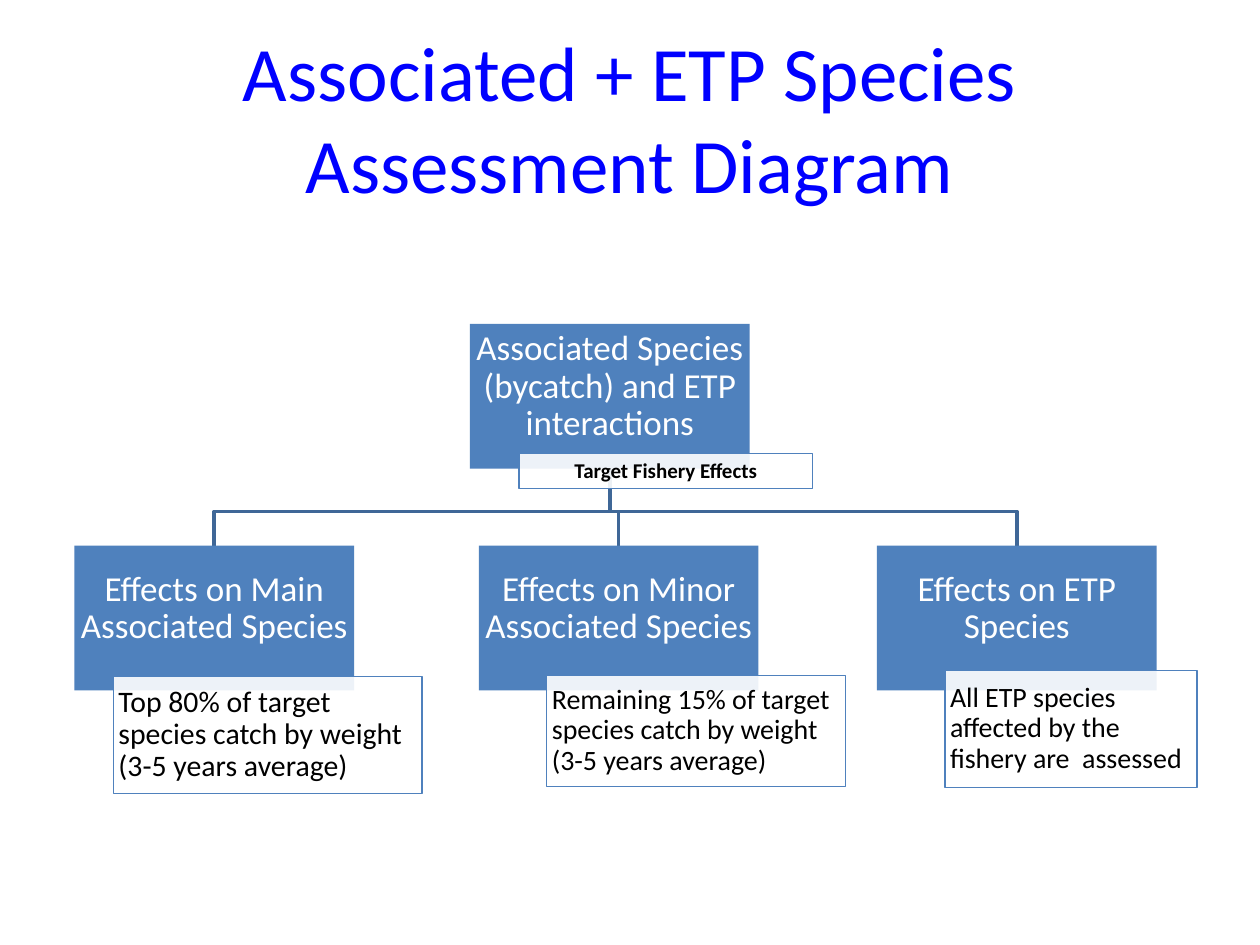
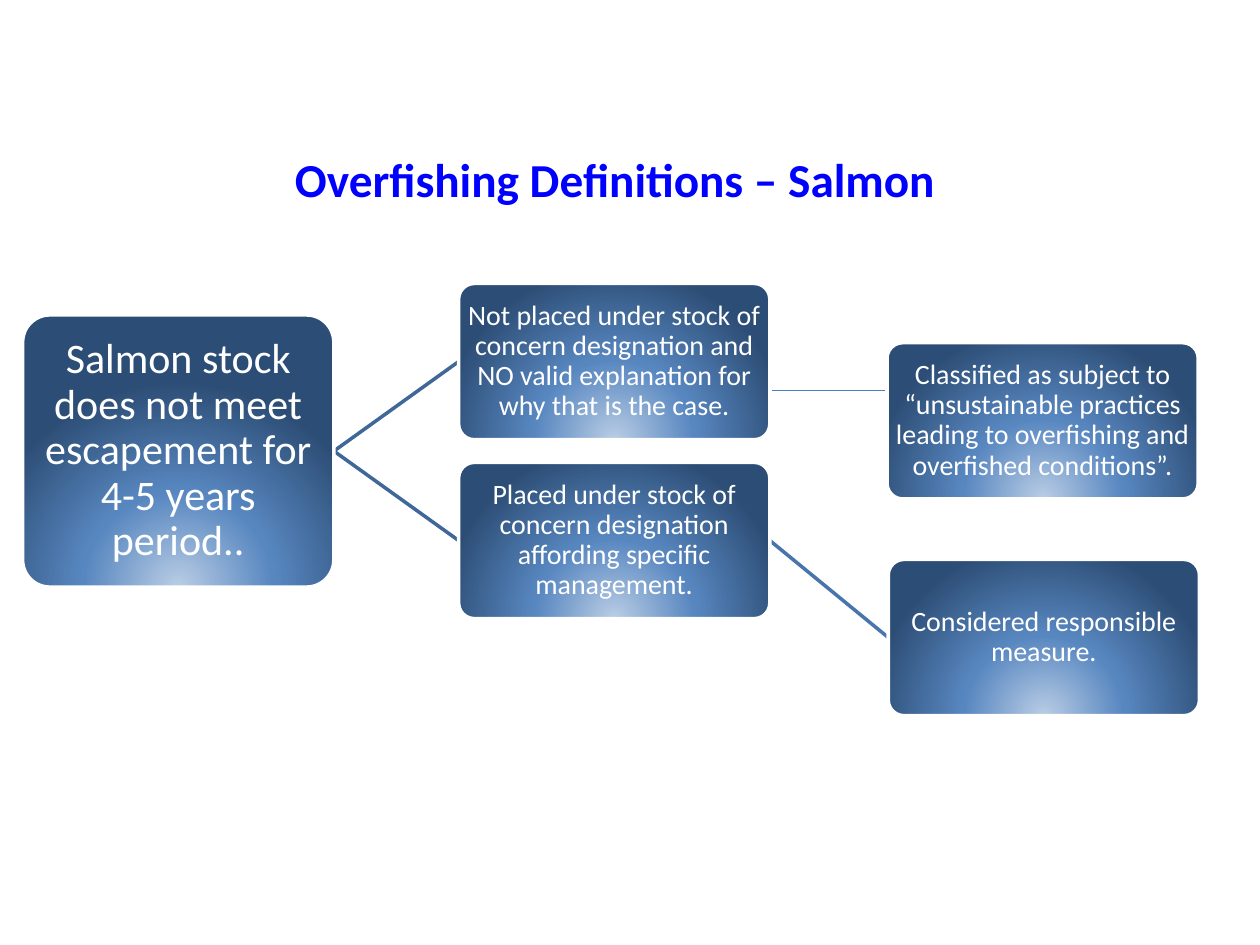
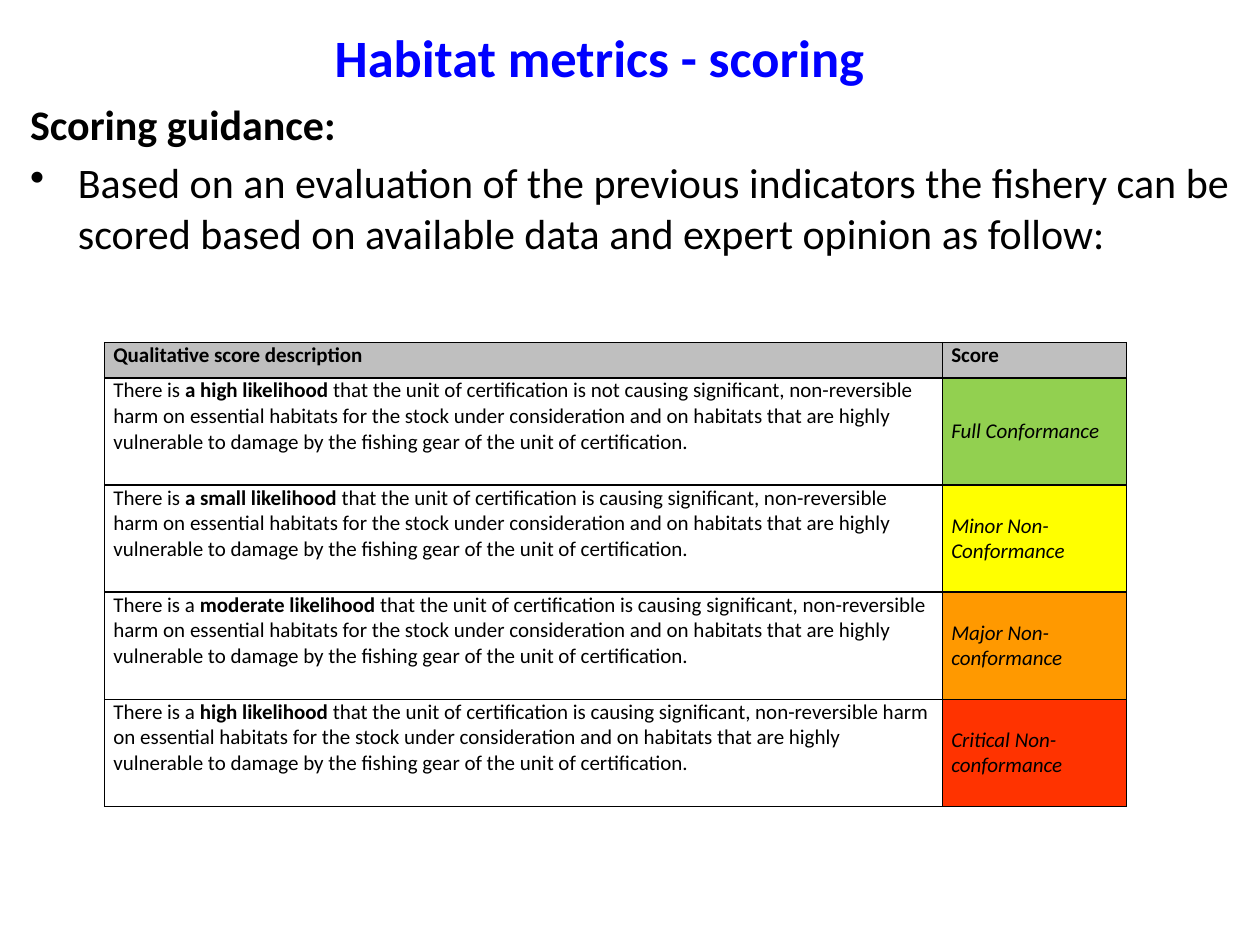
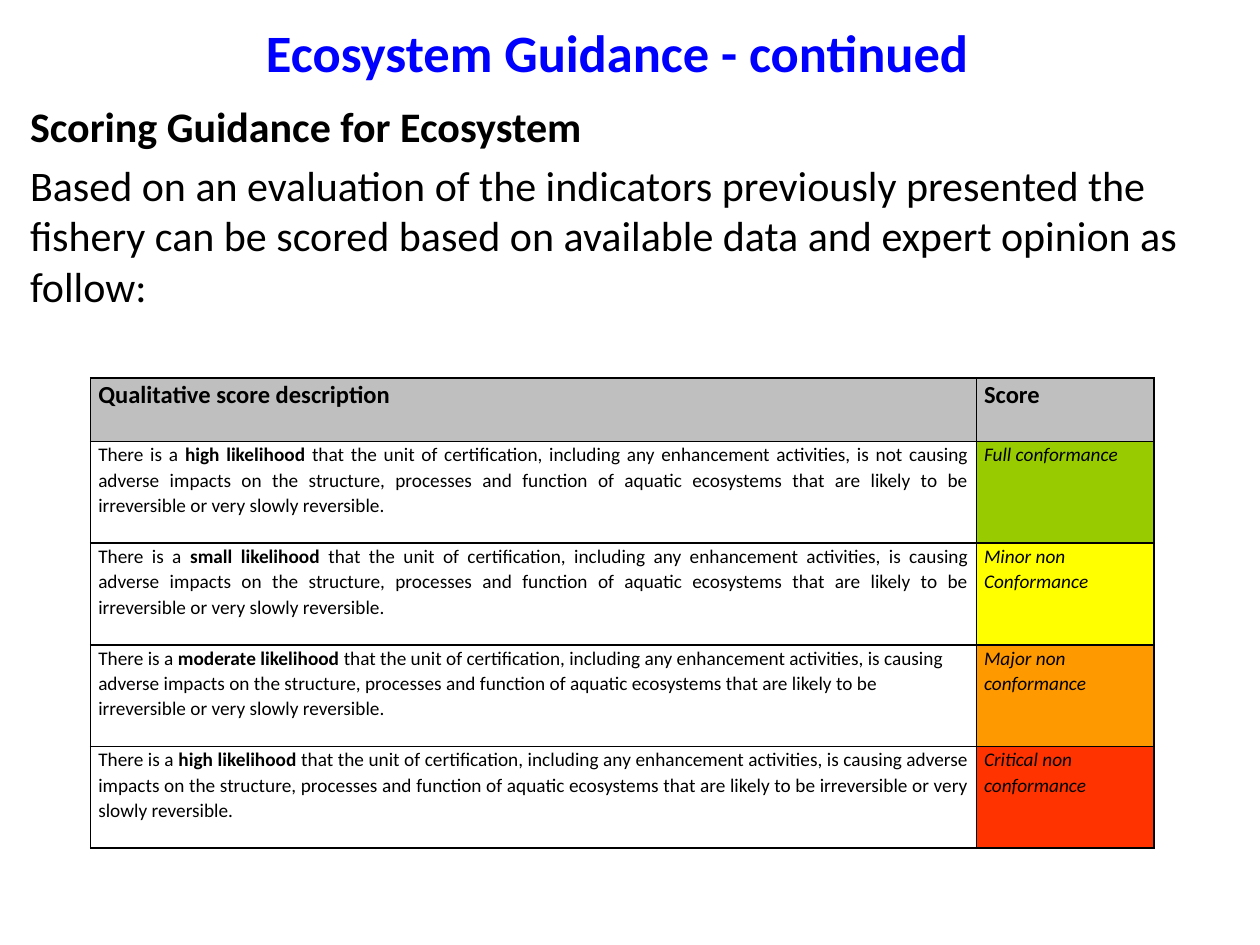
import dataclasses

import lxml.etree
import pptx
import pptx.dml.color
import pptx.enum.shapes
import pptx.enum.text
import pptx.oxml
import pptx.oxml.ns
import pptx.util


@dataclasses.dataclass(frozen=True)
class Theme:
    font: str = "Calibri"
    title: str = "0000FF"
    ink: str = "000000"
    paper: str = "FFFFFF"
    box: str = "4F81BD"
    branch: str = "3F6797"
    branch_light: str = "4875AC"
    branch_thin: str = "4B7EBC"
    header: str = "BFBFBF"
    minor: str = "FFFF00"
    major: str = "FF9900"
    critical: str = "FF3300"
    glow: tuple = ((0, "B9CDE5"), (46, "5887C0"), (100, "2C4D75"))
    diagram_title_size: float = 44
    salmon_title_size: float = 27
    title_size: float = 30
    body_size: float = 24
    box_size: float = 20
    small_size: float = 16


theme = Theme()
RGB = pptx.dml.color.RGBColor.from_string
ALIGN = pptx.enum.text.PP_ALIGN
ANCHOR = pptx.enum.text.MSO_ANCHOR
SHAPE = pptx.enum.shapes.MSO_SHAPE

deck = pptx.Presentation()
deck.slide_width = pptx.util.Inches(10)
deck.slide_height = pptx.util.Inches(7.5)
column = deck.slide_width / 100
row = deck.slide_height / 75


def on_grid(*lengths):
    return [round(length * (row if i % 2 else column)) for i, length in enumerate(lengths)]


def write(frame, text, size=16, color=theme.ink, bold=False, italic=False, align=ALIGN.LEFT,
          anchor=ANCHOR.TOP, insets=(0.1, 0.05, 0.1, 0.05), spacing=None, before=None,
          after=None, bullet=None, hang=0, new=False):
    frame.word_wrap = True
    frame.vertical_anchor = anchor
    frame.margin_left, frame.margin_top, frame.margin_right, frame.margin_bottom = [
        pptx.util.Inches(inset) for inset in insets]
    paragraph = frame.add_paragraph() if new else frame.paragraphs[0]
    paragraph.alignment = align
    paragraph.line_spacing = spacing
    paragraph.space_before = None if before is None else pptx.util.Pt(before)
    paragraph.space_after = None if after is None else pptx.util.Pt(after)
    if bullet:
        properties = paragraph._p.get_or_add_pPr()
        properties.set("marL", str(pptx.util.Inches(hang)))
        properties.set("indent", str(-pptx.util.Inches(hang)))
        lxml.etree.SubElement(properties, pptx.oxml.ns.qn("a:buChar"), char=bullet)
    for i, part in enumerate(text.split("*")):
        if part:
            run = paragraph.add_run()
            run.text = part
            run.font.name = theme.font
            run.font.size = pptx.util.Pt(size)
            run.font.bold = bold or i % 2 == 1
            run.font.italic = italic
            run.font.color.rgb = RGB(color)


slides = []
for title, place, size, bold in (
    ("Associated + ETP Species Assessment Diagram", (5, 3, 90, 12.5), theme.diagram_title_size, False),
    ("Overfishing Definitions – Salmon", (19.9, 10.7, 57.8, 6.9), theme.salmon_title_size, True),
    ("Habitat metrics - scoring", (1.6, 1, 92, 6.9), theme.title_size, True),
    ("Ecosystem Guidance - continued", (3, 0.6, 92, 6.9), theme.title_size, True),
):
    slide = deck.slides.add_slide(deck.slide_layouts[6])
    write(slide.shapes.add_textbox(*on_grid(*place)).text_frame, title, size=size,
          color=theme.title, bold=bold, align=ALIGN.CENTER, anchor=ANCHOR.MIDDLE)
    slides.append(slide)
diagram, salmon, habitat, ecosystem = slides

trunk, trunk_top, fork, branch_end = 48.4, 37.2, 40.6, 43.3
for branch in (80.7, 49.1, 17):
    outline = diagram.shapes.build_freeform(*on_grid(trunk, trunk_top))
    outline.add_line_segments(
        [on_grid(*point) for point in ((trunk, fork), (branch, fork), (branch, branch_end))],
        close=False)
    elbow = outline.convert_to_shape()
    elbow.shadow.inherit = False
    elbow.fill.background()
    elbow.line.color.rgb = RGB(theme.branch)
    elbow.line.width = pptx.util.Pt(2)

for effect, corner, caption, caption_place, caption_format in (
    ("Associated Species (bycatch) and ETP interactions", (37.3, 25.7),
     "Target Fishery Effects", (41.2, 36, 23.3, 2.8),
     dict(size=12, bold=True, align=ALIGN.CENTER)),
    ("Effects on Main Associated Species", (5.9, 43.3),
     "Top 80% of target species catch by weight (3-5 years average)", (9, 53.7, 24.5, 9.3),
     dict(size=17)),
    ("Effects on Minor Associated Species", (38, 43.3),
     "Remaining 15% of target species catch by weight (3-5 years average)",
     (43.4, 53.6, 23.7, 8.8), dict(size=theme.small_size)),
    ("Effects on ETP Species", (69.6, 43.3),
     "All ETP species affected by the fishery are  assessed", (75, 53.2, 20, 9.3),
     dict(size=theme.small_size)),
):
    box = diagram.shapes.add_shape(SHAPE.RECTANGLE, *on_grid(*corner, 22.2, 11.5))
    box.shadow.inherit = False
    box.fill.solid()
    box.fill.fore_color.rgb = RGB(theme.box)
    box.line.fill.background()
    write(box.text_frame, effect, size=theme.box_size, color=theme.paper, align=ALIGN.CENTER,
          anchor=ANCHOR.MIDDLE, insets=(0.01, 0.01, 0.01, 0.16), spacing=0.9)

    note = diagram.shapes.add_shape(SHAPE.RECTANGLE, *on_grid(*caption_place))
    note.shadow.inherit = False
    note.fill.solid()
    note.fill.fore_color.rgb = RGB(theme.paper)
    tint = note._element.spPr.find(pptx.oxml.ns.qn("a:solidFill"))[0]
    lxml.etree.SubElement(tint, pptx.oxml.ns.qn("a:alpha"), val="90000")
    note.line.color.rgb = RGB(theme.box)
    note.line.width = pptx.util.Pt(0.75)
    write(note.text_frame, caption, anchor=ANCHOR.MIDDLE, insets=(0.04, 0.01, 0.04, 0.01),
          spacing=0.9, **caption_format)

for start, end, color, width in (
    ((26.5, 35.8), (36.4, 28.7), theme.branch, 2),
    ((26.5, 35.8), (36.4, 42.9), theme.branch, 2),
    ((61.1, 42.9), (70.5, 50.6), theme.branch_light, 2),
    ((61.3, 31), (70.5, 31), theme.branch_thin, 0.75),
):
    link = salmon.shapes.add_connector(
        pptx.enum.shapes.MSO_CONNECTOR.STRAIGHT, *on_grid(*start, *end))
    link.line.color.rgb = RGB(color)
    link.line.width = pptx.util.Pt(width)
    lxml.etree.SubElement(link._element.spPr, pptx.oxml.ns.qn("a:effectLst"))

stops = "".join(
    f'<a:gs pos="{position * 1000}"><a:srgbClr val="{color}"/></a:gs>'
    for position, color in theme.glow)
glow_xml = (
    f'<a:gradFill {pptx.oxml.ns.nsdecls("a")} rotWithShape="1"><a:gsLst>{stops}</a:gsLst>'
    '<a:path path="circle"><a:fillToRect l="50000" t="130000" r="50000" b="-30000"/></a:path>'
    '</a:gradFill>')
for step, corner, height, size, inset in (
    ("Salmon stock does not meet escapement for 4-5 years period..",
     (1.8, 25), 21.6, theme.body_size, 0.02),
    ("Not placed under stock of concern designation and NO valid explanation for why that is "
     "the case.", (36.4, 22.5), 12.4, theme.small_size, 0.01),
    ("Placed under stock of concern designation affording specific management.",
     (36.4, 36.7), 12.4, theme.small_size, 0.01),
    ("Considered responsible measure.", (70.5, 44.4), 12.4, theme.small_size, 0.01),
    ("Classified as subject to “unsustainable practices leading to overfishing and overfished "
     "conditions”.", (70.4, 27.2), 12.4, theme.small_size, 0.01),
):
    stage = salmon.shapes.add_shape(
        SHAPE.ROUNDED_RECTANGLE, *on_grid(*corner, 24.7, height))
    stage.adjustments[0] = 0.1
    stage.shadow.inherit = False
    stage.fill.background()
    properties = stage._element.spPr
    properties.replace(properties.find(pptx.oxml.ns.qn("a:noFill")), pptx.oxml.parse_xml(glow_xml))
    stage.line.color.rgb = RGB(theme.paper)
    stage.line.width = pptx.util.Pt(2)
    write(stage.text_frame, step, size=size, color=theme.paper, align=ALIGN.CENTER,
          anchor=ANCHOR.MIDDLE, insets=(inset,) * 4, spacing=0.9)

for slide, top, heading, guidance, guidance_format in (
    (habitat, 7.3, "Scoring guidance:",
     "Based on an evaluation of the previous indicators the fishery can be scored based on "
     "available data and expert opinion as follow:", dict(bullet="•", hang=0.38)),
    (ecosystem, 7.5, "Scoring Guidance for Ecosystem",
     "Based on an evaluation of the indicators previously presented the fishery can be scored "
     "based on available data and expert opinion as follow:", {}),
):
    body = slide.shapes.add_textbox(*on_grid(1.4, top, 98.4, 43.2)).text_frame
    write(body, heading, size=theme.body_size, bold=True, before=4.8)
    write(body, guidance, size=theme.body_size, before=4.8, new=True, **guidance_format)

habitat_harm = (
    "There is {} that the unit of certification is {}causing significant, non-reversible harm on "
    "essential habitats for the stock under consideration and on habitats that are highly "
    "vulnerable to damage by the fishing gear of the unit of certification.")
ecosystem_harm = (
    "There is {} that the unit of certification, including any enhancement activities, is "
    "{}causing adverse impacts on the structure, processes and function of aquatic ecosystems "
    "that are likely to be irreversible or very slowly reversible.")
score_tables = (
    dict(slide=habitat, corner=(8.3, 27.2), widths=(66.5, 14.6), heights=(2.8, 8.5),
         header_size=12, size=12, header_align=ALIGN.JUSTIFY, score_anchor=ANCHOR.MIDDLE,
         layout=dict(insets=(0.07, 0, 0.07, 0), after=6), harm=habitat_harm, scores=(
             ("*a high likelihood*", "not ", "Full Conformance", "92D050", ALIGN.LEFT),
             ("*a small likelihood*", "", "Minor Non-Conformance", theme.minor, ALIGN.LEFT),
             ("a *moderate likelihood*", "", "Major Non-conformance", theme.major, ALIGN.LEFT),
             ("a *high likelihood*", "", "Critical Non-conformance", theme.critical, ALIGN.LEFT))),
    dict(slide=ecosystem, corner=(7.2, 30), widths=(70.3, 14.1), heights=(5.05, 8.07),
         header_size=14, size=11, header_align=ALIGN.LEFT, score_anchor=ANCHOR.TOP,
         layout=dict(insets=(0.06, 0, 0.06, 0), spacing=1.07), harm=ecosystem_harm, scores=(
             ("a *high likelihood*", "not ", "Full conformance", "99CC00", ALIGN.JUSTIFY),
             ("a *small likelihood*", "", "Minor non Conformance", theme.minor, ALIGN.JUSTIFY),
             ("a *moderate likelihood*", "", "Major non conformance", theme.major, ALIGN.LEFT),
             ("a *high likelihood*", "", "Critical non conformance", theme.critical,
              ALIGN.JUSTIFY))),
)
for scoring in score_tables:
    header_height, score_height = scoring["heights"]
    heights = [header_height] + [score_height] * len(scoring["scores"])
    grid = scoring["slide"].shapes.add_table(
        len(heights), 2, *on_grid(*scoring["corner"], sum(scoring["widths"]), sum(heights))).table
    grid.first_row = grid.horz_banding = False
    for i, width in enumerate(scoring["widths"]):
        grid.columns[i].width = round(width * column)
    for i, height in enumerate(heights):
        grid.rows[i].height = round(height * row)

    header_format = dict(size=scoring["header_size"], bold=True, align=scoring["header_align"])
    lines = [(("Qualitative score description", theme.header, header_format),
              ("Score", theme.header, header_format))]
    for likelihood, negation, score, color, align in scoring["scores"]:
        lines.append((
            (scoring["harm"].format(likelihood, negation), None,
             dict(size=scoring["size"], align=align)),
            (score, color,
             dict(size=scoring["size"], italic=True, anchor=scoring["score_anchor"]))))

    for i, line in enumerate(lines):
        for j, (text, color, text_format) in enumerate(line):
            cell = grid.cell(i, j)
            write(cell.text_frame, text, **scoring["layout"], **text_format)
            cell.vertical_anchor = text_format.get("anchor", ANCHOR.TOP)
            cell.margin_left, cell.margin_top, cell.margin_right, cell.margin_bottom = [
                pptx.util.Inches(inset) for inset in scoring["layout"]["insets"]]
            frame_properties = cell._tc.get_or_add_tcPr()
            for side in ("a:lnL", "a:lnR", "a:lnT", "a:lnB"):
                border = lxml.etree.SubElement(
                    frame_properties, pptx.oxml.ns.qn(side), w=str(pptx.util.Pt(1)))
                paint = lxml.etree.SubElement(border, pptx.oxml.ns.qn("a:solidFill"))
                lxml.etree.SubElement(paint, pptx.oxml.ns.qn("a:srgbClr"), val=theme.ink)
            if color:
                cell.fill.solid()
                cell.fill.fore_color.rgb = RGB(color)
            else:
                cell.fill.background()

deck.save("out.pptx")
